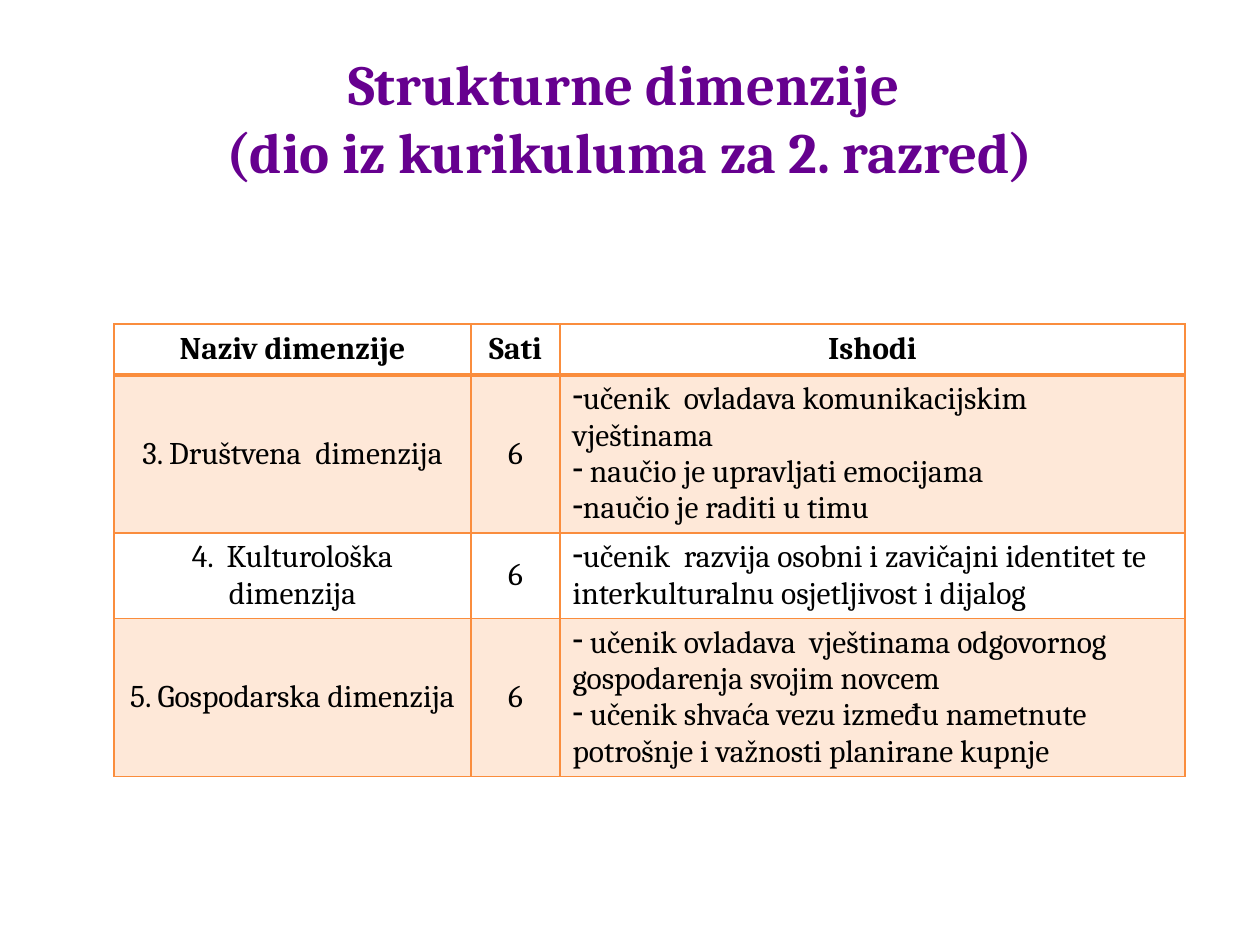
from dataclasses import dataclass

from lxml.etree import SubElement
from pptx import Presentation
from pptx.dml.color import RGBColor
from pptx.enum.text import MSO_ANCHOR, MSO_AUTO_SIZE, PP_ALIGN
from pptx.oxml import parse_xml
from pptx.oxml.ns import nsdecls, qn
from pptx.util import Emu, Pt

EMU_PER_PX = 914400 / 126


@dataclass(frozen=True)
class Theme:
    font: str = "Cambria"
    title_color: str = "66008F"
    text_color: str = "000000"
    accent: str = "FA8D3D"
    title_size: float = 32.4
    table_size: float = 18
    band_alpha: int = 20
    border: int = 1
    header_border: int = 2


@dataclass(frozen=True)
class Dimension:
    name: str
    hours: str
    outcomes: tuple[str, ...]
    height: int


THEME = Theme()
HEADERS = ("Naziv dimenzije", "Sati", "Ishodi")
HEADER_HEIGHT = 51
COLUMN_WIDTHS = (357, 89, 625)
DIMENSIONS = (
    Dimension("3. Društvena  dimenzija", "6", (
        "učenik  ovladava komunikacijskim vještinama",
        " naučio je upravljati emocijama",
        "naučio je raditi u timu"), 158),
    Dimension("4.  Kulturološka dimenzija", "6", (
        "učenik  razvija osobni i zavičajni identitet te "
        "interkulturalnu osjetljivost i dijalog",), 85),
    Dimension("5. Gospodarska dimenzija", "6", (
        " učenik ovladava  vještinama odgovornog gospodarenja svojim novcem",
        " učenik shvaća vezu između nametnute potrošnje i važnosti planirane kupnje"), 158),
)


def px(length: int) -> Emu:
    return Emu(round(length * EMU_PER_PX))


def format_text(text_frame, size: float, color: str, bold: bool, align) -> None:
    for paragraph in text_frame.paragraphs:
        paragraph.alignment = align
        for run in paragraph.runs:
            run.font.name = THEME.font
            run.font.size = Pt(size)
            run.font.bold = bold
            run.font.color.rgb = RGBColor.from_string(color)


def add_dash(paragraph) -> None:
    properties = paragraph._p.get_or_add_pPr()
    properties.set("marL", "0")
    properties.set("indent", "0")
    SubElement(properties, qn("a:buFontTx"))
    SubElement(properties, qn("a:buChar")).set("char", "-")


def set_borders(cell, top: int, bottom: int) -> None:
    widths = {"lnL": THEME.border, "lnR": THEME.border, "lnT": top, "lnB": bottom}
    properties = cell._tc.get_or_add_tcPr()
    for position, (side, width) in enumerate(widths.items()):
        properties.insert(position, parse_xml(
            f'<a:{side} {nsdecls("a")} w="{Pt(width)}"><a:solidFill>'
            f'<a:srgbClr val="{THEME.accent}"/></a:solidFill></a:{side}>'))


def set_fill(cell, banded: bool) -> None:
    if not banded:
        cell.fill.background()
        return
    cell.fill.solid()
    cell.fill.fore_color.rgb = RGBColor.from_string(THEME.accent)
    color = cell._tc.tcPr.find(qn("a:solidFill")).find(qn("a:srgbClr"))
    SubElement(color, qn("a:alpha")).set("val", str(THEME.band_alpha * 1000))


def fill_cell(cell, text: str, row: int, dashed: bool) -> None:
    header = row == 0
    cell.text_frame.text = text
    cell.vertical_anchor = MSO_ANCHOR.MIDDLE
    align = PP_ALIGN.LEFT if dashed else PP_ALIGN.CENTER
    format_text(cell.text_frame, THEME.table_size, THEME.text_color, header, align)
    if dashed:
        for paragraph in cell.text_frame.paragraphs:
            add_dash(paragraph)
    set_fill(cell, banded=row % 2 == 1)
    set_borders(cell,
                top=THEME.header_border if row == 1 else THEME.border,
                bottom=THEME.header_border if header else THEME.border)


def add_title(slide) -> None:
    title = slide.shapes.title
    title.left, title.top, title.width, title.height = px(63), px(38), px(1134), px(158)
    text_frame = title.text_frame
    text_frame.text = "Strukturne dimenzije \v(dio iz kurikuluma za 2. razred)"
    text_frame.auto_size = MSO_AUTO_SIZE.NONE
    text_frame.vertical_anchor = MSO_ANCHOR.MIDDLE
    format_text(text_frame, THEME.title_size, THEME.title_color, True, PP_ALIGN.CENTER)


def add_dimension_table(slide) -> None:
    heights = [HEADER_HEIGHT] + [dimension.height for dimension in DIMENSIONS]
    rows = [HEADERS] + [(dimension.name, dimension.hours, "\n".join(dimension.outcomes))
                        for dimension in DIMENSIONS]
    table = slide.shapes.add_table(
        len(rows), len(HEADERS), px(114), px(324),
        px(sum(COLUMN_WIDTHS)), px(sum(heights))).table
    table.horz_banding = False
    table.first_row = False
    for column, width in zip(table.columns, COLUMN_WIDTHS):
        column.width = px(width)
    for row, (height, texts) in enumerate(zip(heights, rows)):
        table.rows[row].height = px(height)
        for column, text in enumerate(texts):
            dashed = row > 0 and column == len(HEADERS) - 1
            fill_cell(table.cell(row, column), text, row, dashed)


def main() -> None:
    presentation = Presentation()
    presentation.slide_width, presentation.slide_height = px(1260), px(945)
    slide = presentation.slides.add_slide(presentation.slide_layouts[5])

    # Heading
    add_title(slide)

    # Dimensions with their hours and outcomes
    add_dimension_table(slide)

    presentation.save("out.pptx")


if __name__ == "__main__":
    main()
